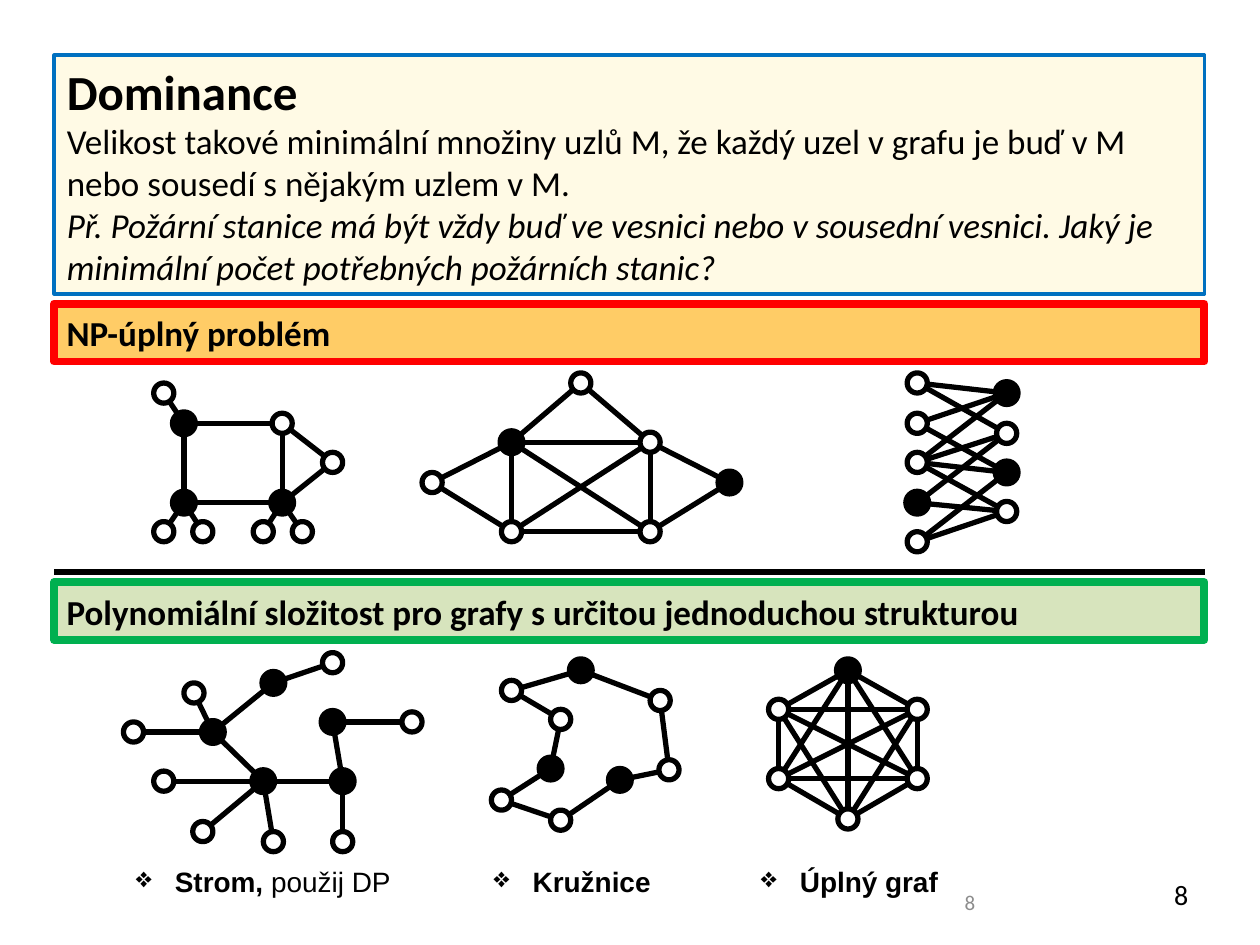
from itertools import combinations

from lxml.etree import SubElement
from pptx import Presentation
from pptx.dml.color import RGBColor
from pptx.enum.shapes import MSO_CONNECTOR as CONNECTOR, MSO_SHAPE as SHAPE
from pptx.enum.text import MSO_ANCHOR as ANCHOR, MSO_AUTO_SIZE as AUTO_SIZE, PP_ALIGN as ALIGN
from pptx.oxml.ns import qn
from pptx.util import Pt

PX = 9144  # 100 px to the inch
RADIUS = 8
LEFT, WIDTH = 43, 913

BLACK = RGBColor(0x00, 0x00, 0x00)
WHITE = RGBColor(0xFF, 0xFF, 0xFF)
GREY = RGBColor(0x8C, 0x8C, 0x8C)
CREAM = RGBColor(0xFF, 0xFA, 0xE5)
BLUE = RGBColor(0x00, 0x70, 0xC0)
ORANGE = RGBColor(0xFF, 0xCC, 0x66)
RED = RGBColor(0xFF, 0x00, 0x00)
PALE_GREEN = RGBColor(0xD7, 0xE4, 0xBD)
GREEN = RGBColor(0x00, 0xB0, 0x50)

# Each graph: its vertices, then its edges; a capital letter marks a vertex of M.
GRAPHS = [
    ({"a": (130, 312), "B": (146, 336), "c": (224, 336), "d": (264, 367),
      "E": (146, 399), "F": (224, 399), "g": (130, 422), "h": (161, 422),
      "i": (209, 422), "j": (240, 422)},
     "aB Bc cd dF EF BE cF Eg Eh Fi Fj".split()),
    ({"a": (461, 304), "B": (406, 351), "c": (516, 351), "d": (343, 383),
      "E": (579, 383), "f": (406, 422), "g": (516, 422)},
     "aB ac Bc Bd Bf Bg cE cf cg df Eg fg".split()),
    ({"a": (728, 304), "b": (728, 336), "c": (728, 367), "D": (728, 399),
      "e": (728, 430), "F": (799, 312), "g": (799, 344), "H": (799, 375),
      "i": (799, 406)},
     "aF ag bF bH cF cg cH ci Dg Di eH ei".split()),
    ({"a": (264, 526), "B": (217, 542), "c": (154, 550), "D": (169, 581),
      "e": (106, 581), "F": (264, 573), "g": (327, 573), "h": (130, 620),
      "I": (209, 620), "J": (272, 620), "k": (161, 660), "l": (217, 668),
      "m": (272, 668)},
     "aB BD cD De DI FJ Fg hI IJ Ik Il Jm".split()),
    ({"A": (461, 532), "b": (524, 556), "c": (531, 611), "D": (492, 619),
      "e": (445, 651), "f": (398, 635), "G": (437, 610), "h": (445, 571),
      "i": (406, 548)},
     "Ab bc cD De ef fG Gh hi iA".split()),
    ({"A": (673, 532), "b": (728, 563), "c": (728, 618), "d": (673, 650),
      "e": (618, 618), "f": (618, 563)},
     list(combinations("Abcdef", 2))),
]


def paint(shape, fill, line, points):
    shape.shadow.inherit = False
    shape.fill.solid()
    shape.fill.fore_color.rgb = fill
    shape.line.color.rgb = line
    shape.line.width = Pt(points)


def draw_line(start, end):
    line = slide.shapes.add_connector(
        CONNECTOR.STRAIGHT, *(n * PX for n in (*start, *end)))
    line.line.color.rgb = BLACK
    line.line.width = Pt(3)
    SubElement(line._element.spPr, qn("a:effectLst"))


prs = Presentation()
prs.slide_width, prs.slide_height = 1000 * PX, 750 * PX
slide = prs.slides.add_slide(prs.slide_layouts[5])

# Definition
definition = slide.shapes.title
definition.left, definition.top = LEFT * PX, 44 * PX
definition.width, definition.height = WIDTH * PX, 189 * PX
paint(definition, CREAM, BLUE, 2.25)
frame = definition.text_frame
frame.word_wrap = True
frame.auto_size = AUTO_SIZE.NONE
frame.vertical_anchor = ANCHOR.MIDDLE
frame.text = (
    "Dominance\n"
    "Velikost takové minimální množiny uzlů M, že každý uzel v grafu je buď v M "
    "nebo sousedí s nějakým uzlem v M.\n"
    "Př. Požární stanice má být vždy buď ve vesnici nebo v sousední vesnici. "
    "Jaký je minimální počet potřebných požárních stanic?")
for paragraph, (size, bold, italic) in zip(
        frame.paragraphs, [(28, True, False), (20, False, False), (20, False, True)]):
    paragraph.alignment = ALIGN.LEFT
    font = paragraph.font
    font.name, font.size, font.color.rgb = "Calibri", Pt(size), BLACK
    font.bold, font.italic = bold, italic

# Section headings
for top, heading, fill, line in [
        (241, "NP-úplný problém", ORANGE, RED),
        (462, "Polynomiální složitost pro grafy s určitou jednoduchou strukturou",
         PALE_GREEN, GREEN)]:
    band = slide.shapes.add_shape(
        SHAPE.RECTANGLE, LEFT * PX, top * PX, WIDTH * PX, 46 * PX)
    paint(band, fill, line, 4.5)
    band.text_frame.vertical_anchor = ANCHOR.MIDDLE
    paragraph = band.text_frame.paragraphs[0]
    paragraph.text = heading
    paragraph.alignment = ALIGN.LEFT
    font = paragraph.font
    font.name, font.size, font.bold, font.color.rgb = "Calibri", Pt(20), True, BLACK

draw_line((LEFT, 454), (LEFT + WIDTH, 454))

# Graphs
for vertices, edges in GRAPHS:
    for start, end in edges:
        draw_line(vertices[start], vertices[end])
    for name, (x, y) in vertices.items():
        vertex = slide.shapes.add_shape(
            SHAPE.OVAL, (x - RADIUS) * PX, (y - RADIUS) * PX,
            2 * RADIUS * PX, 2 * RADIUS * PX)
        if name.isupper():
            paint(vertex, BLACK, BLACK, 4.5)
        else:
            paint(vertex, WHITE, BLACK, 3)

# Graph class captions
for left, width, graph_class, hint in [
        (98, 268, "Strom, ", "použij DP"),
        (382, 197, "Kružnice", ""),
        (594, 171, "Úplný graf", "")]:
    caption = slide.shapes.add_textbox(left * PX, 681 * PX, width * PX, 37 * PX)
    caption.text_frame.word_wrap = True
    paragraph = caption.text_frame.paragraphs[0]
    properties = paragraph._p.get_or_add_pPr()
    properties.set("marL", str(31 * PX))
    properties.set("indent", str(-31 * PX))
    SubElement(properties, qn("a:buChar")).set("char", "❖")
    font = paragraph.font
    font.name, font.size, font.color.rgb = "Arial", Pt(16), BLACK
    for text, bold in [(graph_class, True), (hint, False)]:
        if text:
            run = paragraph.add_run()
            run.text = text
            run.font.bold = bold

# Page numbers
for left, top, size, colour in [(720, 690, 16, BLACK), (551, 696, 12, GREY)]:
    number = slide.shapes.add_textbox(left * PX, top * PX, 233 * PX, 40 * PX)
    number.text_frame.word_wrap = True
    number.text_frame.vertical_anchor = ANCHOR.MIDDLE
    paragraph = number.text_frame.paragraphs[0]
    paragraph.text = "8"
    paragraph.alignment = ALIGN.RIGHT
    font = paragraph.font
    font.name, font.size, font.color.rgb = "Calibri", Pt(size), colour

prs.save("out.pptx")
